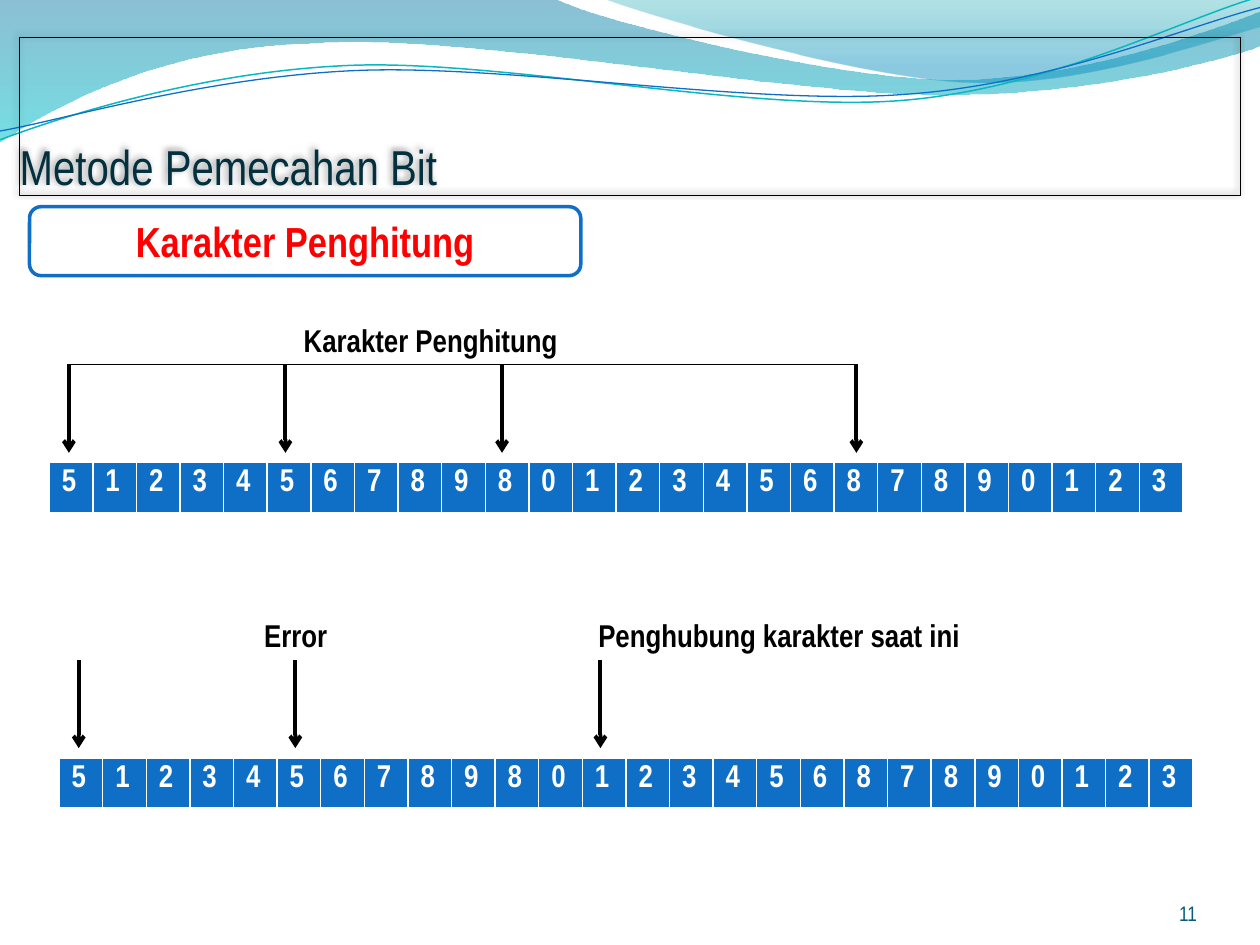
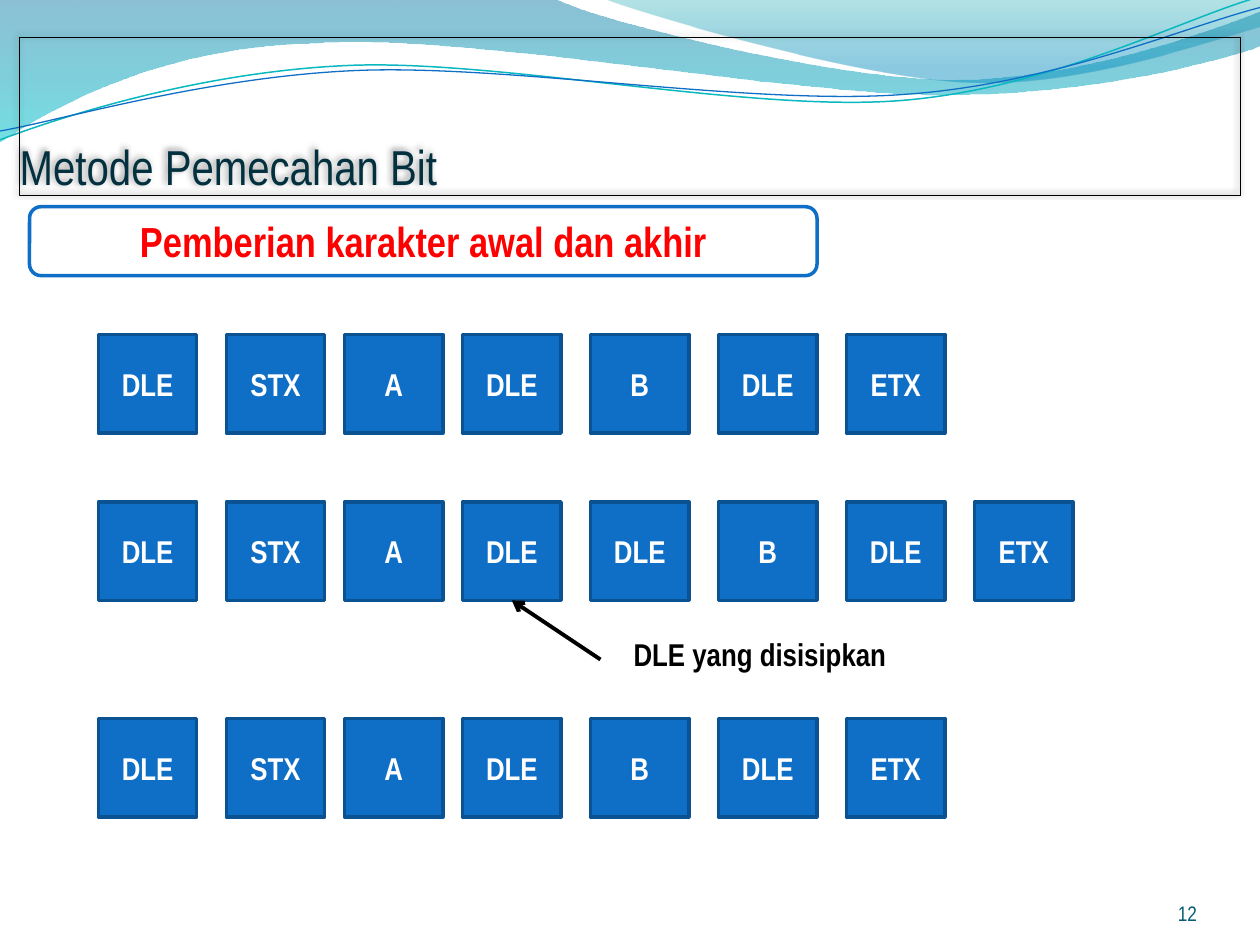
from lxml import etree
from pptx import Presentation
from pptx import util as u
from pptx.dml.color import RGBColor
from pptx.enum import shapes, text
from pptx.oxml.ns import qn

FONT = "Arial Narrow"
COLORS = {
    "white": "FFFFFF", "black": "000000", "red": "FF0000",
    "blue": "0F6FC6", "edge": "0B5292", "title": "02303E", "number": "045D75",
    "cyan": "0AB8BF", "sea": "0074A1", "aqua": "00C6CF", "teal": "00A1A9", "sky": "008BBF",
}
HEADING = "Metode Pemecahan Bit"
DIGITS = "51234567898012345687890123"
GRID = 128

BANDS = [
    {"start": (0, 0), "stops": [("sea", 0, 45), ("aqua", 1, 55)], "steps": [
        [(4.4, -0.01)],
        [(4.76, 0.17), (6.64, 0.63), (7.58, 0.63)],
        [(8.53, 0.63), (9.58, 0.26), (10, 0.09)],
        [(10.01, 0.36)],
        [(9.83, 0.44), (8.7, 0.76), (7.46, 0.75)],
        [(6.22, 0.75), (3.82, 0.28), (2.57, 0.34)],
        [(1.29, 0.36), (0.46, 0.83), (-0.01, 1.13)]]},
    {"start": (4.79, -0.01), "stops": [("teal", 0, 30), ("sky", 0.8, 45)], "steps": [
        [(5.09, 0.11), (6.82, 0.62), (7.69, 0.65)],
        [(8.56, 0.69), (9.61, 0.32), (10, 0.21)],
        [(10, 0)]]},
    {"start": (0, 1.11), "line": ("cyan", 0.85), "steps": [
        [(0.48, 0.93), (1.58, 0.57), (2.77, 0.52)],
        [(3.95, 0.47), (5.93, 0.89), (7.13, 0.8)],
        [(8.33, 0.71), (9.38, 0.15), (9.98, -0.02)]]},
    {"start": (0, 1.04), "line": ("blue", 0.75), "steps": [
        [(0.47, 0.96), (1.64, 0.61), (2.83, 0.56)],
        [(4.03, 0.51), (5.97, 0.84), (7.17, 0.75)],
        [(8.36, 0.67), (9.41, 0.21), (10, 0.06)]]},
]
COUNTED = [
    {"left": 5, "top": 47, "arrows": [7, 29, 51, 87], "bracket": True,
     "labels": [("Karakter Penghitung", 27, 33.5)]},
    {"left": 6, "top": 77, "arrows": [8, 30, 61], "bracket": False,
     "labels": [("Error", 25, 10.1), ("Penghubung karakter saat ini", 56, 46.3)]},
]
FRAME_COLUMNS = [10, 23, 35, 47, 60, 73, 86, 99]
FRAMES = [
    (34, ["DLE", "STX", "A", "DLE", "B", "DLE", "ETX"]),
    (51, ["DLE", "STX", "A", "DLE", "DLE", "B", "DLE", "ETX"]),
    (73, ["DLE", "STX", "A", "DLE", "B", "DLE", "ETX"]),
]
STUFFED = (51, 47)

deck = Presentation()
deck.slide_width, deck.slide_height = u.Inches(10), u.Inches(7.5)
layout = deck.slide_layouts[5]


def at(*units):
    return [round(n * deck.slide_width / GRID) for n in units]


def rgb(name):
    return RGBColor.from_string(COLORS[name])


def outline(target, color, width):
    target.line.color.rgb = rgb(color)
    target.line.width = u.Pt(width)


def write(frame, words, size, color, bold=True, align=text.PP_ALIGN.CENTER):
    paragraph = frame.paragraphs[0]
    paragraph.alignment = align
    run = paragraph.add_run()
    run.text = words
    run.font.name, run.font.size, run.font.bold = FONT, u.Pt(size), bold
    run.font.color.rgb = rgb(color)


def flush(frame):
    frame.margin_left = frame.margin_right = frame.margin_top = frame.margin_bottom = 0
    frame.vertical_anchor = text.MSO_ANCHOR.BOTTOM


def emu(point):
    return tuple(u.Inches(n) for n in point)


def bend(wave, steps):
    for segment, step in zip(list(wave.element.iter(qn("a:lnTo"))), steps):
        if len(step) == 3:
            cubic = etree.Element(qn("a:cubicBezTo"))
            for x, y in map(emu, step):
                etree.SubElement(cubic, qn("a:pt"), x=str(x - wave.left), y=str(y - wave.top))
            segment.getparent().replace(segment, cubic)


def draw_band(slide, band):
    builder = slide.shapes.build_freeform(*emu(band["start"]))
    builder.add_line_segments([emu(step[-1]) for step in band["steps"]], close="stops" in band)
    wave = builder.convert_to_shape()
    bend(wave, band["steps"])
    wave.shadow.inherit = False
    if "line" in band:
        wave.fill.background()
        outline(wave, *band["line"])
    else:
        wave.line.fill.background()
        wave.fill.gradient()
        wave.fill.gradient_angle = 270
        for stop, (color, position, _) in zip(wave.fill.gradient_stops, band["stops"]):
            stop.color.rgb = rgb(color)
            stop.position = position
        for tint, (_, _, opacity) in zip(wave.element.spPr.iter(qn("a:srgbClr")), band["stops"]):
            etree.SubElement(tint, qn("a:alpha"), val=str(opacity * 1000))
    layout.shapes.element.append(wave.element)


def box(slide, kind, place, words, size, color, fill, edge):
    shape = slide.shapes.add_shape(kind, *at(*place))
    shape.shadow.inherit = False
    shape.fill.solid()
    shape.fill.fore_color.rgb = rgb(fill)
    outline(shape, edge, 2)
    shape.text_frame.vertical_anchor = text.MSO_ANCHOR.MIDDLE
    write(shape.text_frame, words, size, color)
    return shape


def label(slide, words, left, top, width):
    frame = slide.shapes.add_textbox(*at(left, top, width, 5.1)).text_frame
    frame.word_wrap = False
    write(frame, words, 18, "black")


def connect(slide, start, end, width=2.25, arrow=True):
    link = slide.shapes.add_connector(shapes.MSO_CONNECTOR.STRAIGHT, *at(*start, *end))
    outline(link, "black", width)
    if arrow:
        etree.SubElement(link.line._get_or_add_ln(), qn("a:tailEnd"), type="arrow")
    etree.SubElement(link.element.spPr, qn("a:effectLst"))
    return link


def start_slide(number, topic, topic_width):
    slide = deck.slides.add_slide(layout)
    title = slide.shapes.title
    title.left, title.top, title.width, title.height = at(2, 3.84, 124, 16)
    outline(title, "black", 0.75)
    effects = etree.SubElement(title.element.spPr, qn("a:effectLst"))
    shadow = etree.SubElement(effects, qn("a:outerShdw"), blurRad=str(u.Pt(4)),
                              dist=str(u.Pt(3)), dir=str(225 * 60000))
    tint = etree.SubElement(shadow, qn("a:srgbClr"), val=COLORS["black"])
    etree.SubElement(tint, qn("a:alpha"), val="40000")
    flush(title.text_frame)
    title.text_frame.margin_top = u.Inches(0.05)
    title.text_frame.auto_size = text.MSO_AUTO_SIZE.NONE
    write(title.text_frame, HEADING, 28, "title", False, text.PP_ALIGN.LEFT)
    page = slide.shapes.add_textbox(*at(111, 88.9, 10.6, 5.1)).text_frame
    page.word_wrap = True
    flush(page)
    write(page, number, 12, "number", False, text.PP_ALIGN.RIGHT)
    box(slide, shapes.MSO_SHAPE.ROUNDED_RECTANGLE, (3, 21, topic_width, 7),
        topic, 24, "red", "white", "blue")
    return slide


def digit_strip(slide, left, top, width):
    strip = slide.shapes.add_table(1, len(DIGITS), *at(left, top, width, 5.2)).table
    strip.first_row = strip.horz_banding = False
    for column, digit in enumerate(DIGITS):
        strip.columns[column].width = at(width / len(DIGITS))[0]
        cell = strip.cell(0, column)
        write(cell.text_frame, digit, 18, "white", align=text.PP_ALIGN.LEFT)
        borders = cell._tc.get_or_add_tcPr()
        for side, weight in (("lnL", 1), ("lnR", 1), ("lnT", 1), ("lnB", 3)):
            border = etree.SubElement(borders, qn("a:" + side), w=str(u.Pt(weight)))
            paint = etree.SubElement(border, qn("a:solidFill"))
            etree.SubElement(paint, qn("a:srgbClr"), val=COLORS["white"])
        cell.fill.solid()
        cell.fill.fore_color.rgb = rgb("blue")


def counting_slide():
    slide = start_slide("11", "Karakter Penghitung", 56)
    for band in BANDS:
        draw_band(slide, band)
    for row in COUNTED:
        top, arrows = row["top"], row["arrows"]
        digit_strip(slide, row["left"], top, 115.2)
        for x in arrows:
            connect(slide, (x, top - 10), (x, top - 1))
        if row["bracket"]:
            connect(slide, (arrows[0], top - 10), (arrows[-1], top - 10), 0.75, False)
        for words, x, label_width in row["labels"]:
            label(slide, words, x, top - 15, label_width)


def framing_slide():
    slide = start_slide("12", "Pemberian karakter awal dan akhir", 80)
    blocks = {}
    for top, words in FRAMES:
        for left, word in zip(FRAME_COLUMNS, words):
            blocks[top, left] = box(slide, shapes.MSO_SHAPE.RECTANGLE, (left, top, 10, 10),
                                    word, 18, "white", "blue", "edge")
    pointer = connect(slide, (61, 67), (52, 61))
    pointer.end_connect(blocks[STUFFED], 2)
    label(slide, "DLE yang disisipkan", 60.4, 63.85, 33.6)


if __name__ == "__main__":
    counting_slide()
    framing_slide()
    deck.save("out.pptx")
